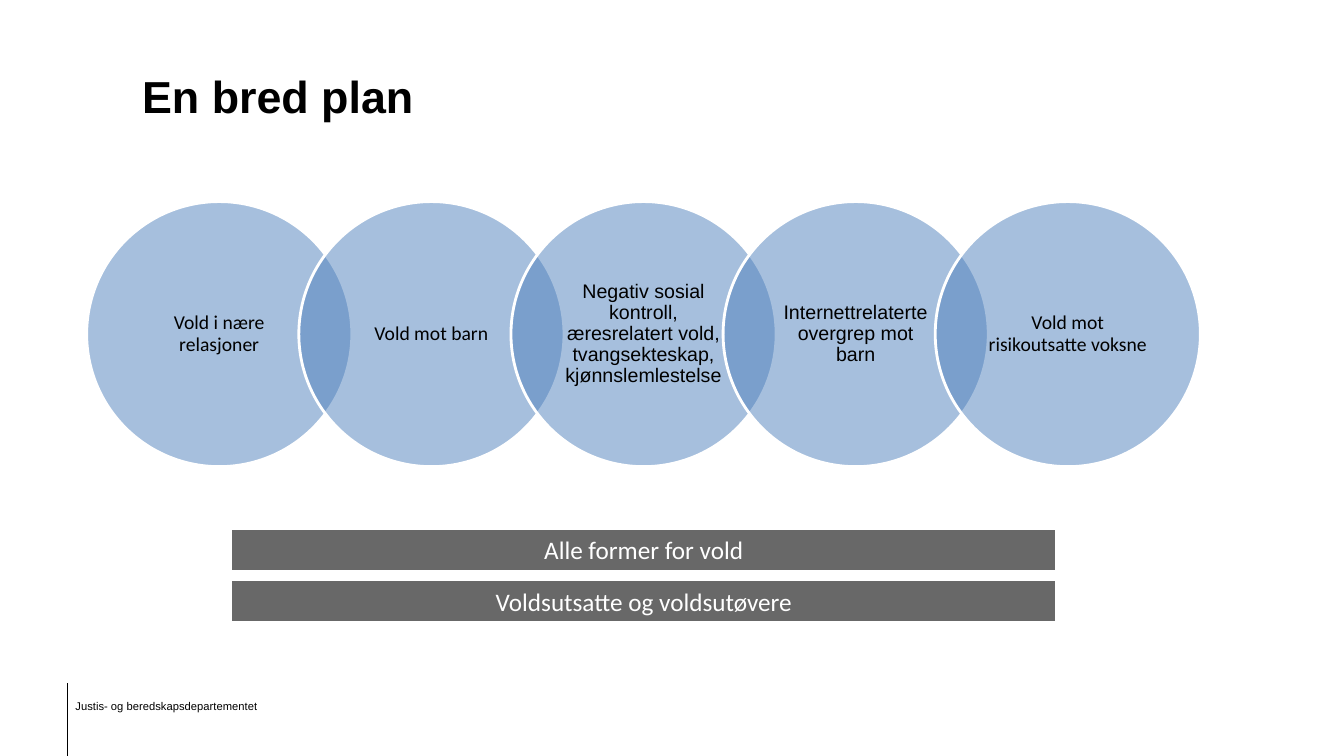
from lxml import etree
from pptx import Presentation
from pptx.dml.color import RGBColor
from pptx.enum import shapes, text
from pptx.oxml import ns
from pptx.util import Inches, Pt

COLORS = {"black": "000000", "white": "FFFFFF", "circle": "4F81BD", "bar": "686868"}


def write(shape, wording, size, font="Calibri", color="black", bold=False,
          align=text.PP_ALIGN.CENTER, anchor=text.MSO_ANCHOR.MIDDLE,
          margins=(0.1, 0.05), spacing=None):
    frame = shape.text_frame
    frame.word_wrap = True
    frame.auto_size = text.MSO_AUTO_SIZE.NONE
    frame.vertical_anchor = anchor
    frame.margin_left = frame.margin_right = Inches(margins[0])
    frame.margin_top = frame.margin_bottom = Inches(margins[1])
    para = frame.paragraphs[0]
    para.alignment = align
    if spacing:
        para.line_spacing = spacing
    span = para.add_run()
    span.text = wording
    span.font.size = Pt(size)
    span.font.name = font
    span.font.bold = bold
    span.font.color.rgb = RGBColor.from_string(COLORS[color])


def add_filled(kind, left, top, width, height, color):
    shape = page.shapes.add_shape(kind, Inches(left), Inches(top), Inches(width), Inches(height))
    shape.shadow.inherit = False
    shape.fill.solid()
    shape.fill.fore_color.rgb = RGBColor.from_string(COLORS[color])
    shape.line.color.rgb = RGBColor.from_string(COLORS["white"])
    shape.line.width = Pt(2)
    return shape


deck = Presentation()
deck.slide_width = Inches(13.33)
deck.slide_height = Inches(7.5)
page = deck.slides.add_slide(deck.slide_layouts[5])

department = page.shapes.add_textbox(Inches(0.65), Inches(6.89), Inches(2.83), Inches(0.37))
write(department, "Justis- og beredskapsdepartementet", 8, font="Arial",
      align=text.PP_ALIGN.LEFT, anchor=text.MSO_ANCHOR.TOP)

rule = page.shapes.add_connector(shapes.MSO_CONNECTOR.STRAIGHT,
                                 Inches(0.67), Inches(6.78), Inches(0.67), Inches(7.5))
rule.line.color.rgb = RGBColor.from_string(COLORS["black"])
rule.line.width = Pt(0.75)
etree.SubElement(rule._element.spPr, ns.qn("a:effectLst"))

title = page.shapes.title
title.left, title.top = Inches(1.31), Inches(0.32)
title.width, title.height = Inches(10.71), Inches(1.25)
write(title, "En bred plan", 32, font="Arial", bold=True, align=text.PP_ALIGN.LEFT)

topics = [
    ("Vold i nære relasjoner", "Calibri"),
    ("Vold mot barn", "Calibri"),
    ("Negativ sosial kontroll, æresrelatert vold, tvangsekteskap, kjønnslemlestelse", "Arial"),
    ("Internettrelaterte overgrep mot barn", "Arial"),
    ("Vold mot risikoutsatte voksne", "Calibri"),
]
diameter = 2.63
label_size = 1.86
inset = (diameter - label_size) / 2
for index, (topic, font) in enumerate(topics):
    left = 0.86 + index * diameter * 0.8
    circle = add_filled(shapes.MSO_SHAPE.OVAL, left, 2, diameter, diameter, "circle")
    fill_color = circle._element.spPr.find(ns.qn("a:solidFill"))[0]
    etree.SubElement(fill_color, ns.qn("a:alpha"), val="50000")
    label = page.shapes.add_textbox(Inches(left + inset), Inches(2 + inset),
                                    Inches(label_size), Inches(label_size))
    write(label, topic, 14, font=font, margins=(0.14, 0.02), spacing=0.9)

for index, wording in enumerate(["Alle former for vold", "Voldsutsatte og voldsutøvere"]):
    bar = add_filled(shapes.MSO_SHAPE.RECTANGLE, 2.29, 5.24 + index * 0.51, 8.19, 0.43, "bar")
    write(bar, wording, 18, color="white")

deck.save("out.pptx")
